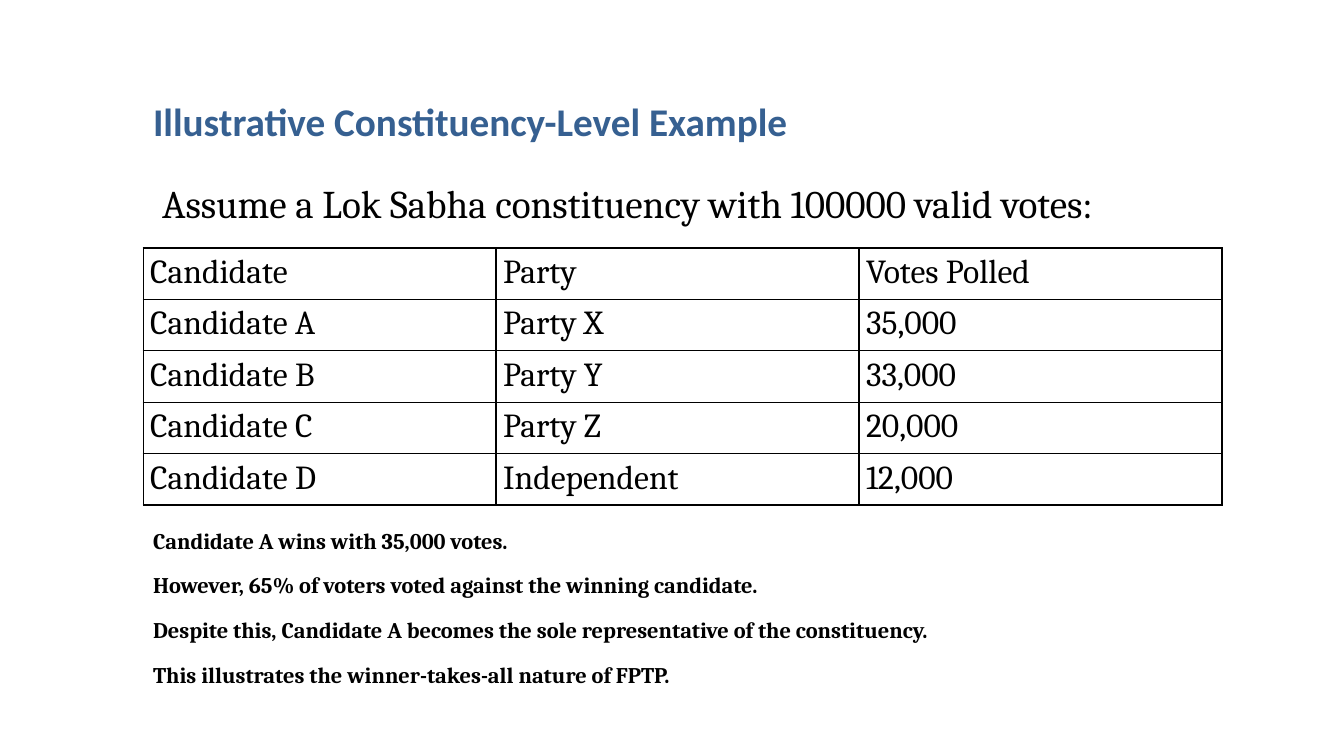
from dataclasses import dataclass

from lxml import etree
from pptx import Presentation, util as u
from pptx.dml.color import RGBColor
from pptx.enum import text as t
from pptx.oxml import ns

# Content
TITLE = ["Illustrative Constituency-Level Example"]
LEAD = ["Assume a Lok Sabha constituency with 100000 valid votes:"]
VOTES = [
    ("Candidate", "Party", "Votes Polled"),
    ("Candidate A", "Party X", "35,000"),
    ("Candidate B", "Party Y", "33,000"),
    ("Candidate C", "Party Z", "20,000"),
    ("Candidate D", "Independent", "12,000"),
]
NOTES = [
    "Candidate A wins with 35,000 votes.",
    "However, 65% of voters voted against the winning candidate.",
    "Despite this, Candidate A becomes the sole representative of the constituency.",
    "This illustrates the winner-takes-all nature of FPTP.",
]


# Theme: each style is font, size, colour, bold
@dataclass(frozen=True)
class Theme:
    title: tuple = ("Calibri", 28, "366091", True)
    lead: tuple = ("Cambria", 28, "000000", False)
    cell: tuple = ("Cambria", 24, "000000", False)
    note: tuple = ("Cambria", 16, "000000", True)
    rule: str = "000000"
    pitch: float = 1.14
    gap: int = 10


LOOK = Theme()

# Layout in inches
WIDE, HIGH = 13.33, 7.5
LEFT = 1.42
COLS = (3.5, 3.6, 3.6)
ROW = 0.51
TOP = 2.46


def write(frame, lines, style):
    face, size, tint, bold = style
    frame.word_wrap = True
    for i, line in enumerate(lines):
        para = frame.add_paragraph() if i else frame.paragraphs[0]
        para.alignment = t.PP_ALIGN.LEFT
        para.line_spacing = LOOK.pitch
        para.space_after = u.Pt(LOOK.gap)
        run = para.add_run()
        run.text = line
        font = run.font
        font.name, font.size, font.bold = face, u.Pt(size), bold
        font.color.rgb = RGBColor.from_string(tint)


def block(slide, lines, style, area):
    box = slide.shapes.add_textbox(*map(u.Inches, area))
    write(box.text_frame, lines, style)
    box.text_frame.auto_size = t.MSO_AUTO_SIZE.SHAPE_TO_FIT_TEXT


def border(cell):
    props = cell._tc.get_or_add_tcPr()
    for i, side in enumerate(("lnL", "lnR", "lnT", "lnB")):
        line = etree.Element(ns.qn("a:" + side), w=str(int(u.Pt(1))))
        fill = etree.SubElement(line, ns.qn("a:solidFill"))
        etree.SubElement(fill, ns.qn("a:srgbClr"), val=LOOK.rule)
        props.insert(i, line)


def grid(slide):
    area = (LEFT, TOP, sum(COLS), ROW * len(VOTES))
    table = slide.shapes.add_table(
        len(VOTES), len(COLS), *map(u.Inches, area)).table
    table.first_row = table.horz_banding = False
    for col, width in zip(table.columns, COLS):
        col.width = u.Inches(width)
    for r, row in enumerate(VOTES):
        table.rows[r].height = u.Inches(ROW)
        for c, word in enumerate(row):
            cell = table.cell(r, c)
            cell.margin_left = cell.margin_right = u.Inches(0.07)
            cell.margin_top = cell.margin_bottom = 0
            cell.fill.background()
            border(cell)
            write(cell.text_frame, [word], LOOK.cell)


def main():
    deck = Presentation()
    deck.slide_width, deck.slide_height = u.Inches(WIDE), u.Inches(HIGH)
    slide = deck.slides.add_slide(deck.slide_layouts[6])

    # Heading and lead line
    block(slide, TITLE, LOOK.title, (LEFT, 0.85, 10.49, 0.64))
    block(slide, LEAD, LOOK.lead, (1.51, 1.66, 10.56, 0.64))

    # Votes and what they show
    grid(slide)
    block(slide, NOTES, LOOK.note, (LEFT, 5.14, 10.78, 1.75))
    deck.save("out.pptx")


if __name__ == "__main__":
    main()
